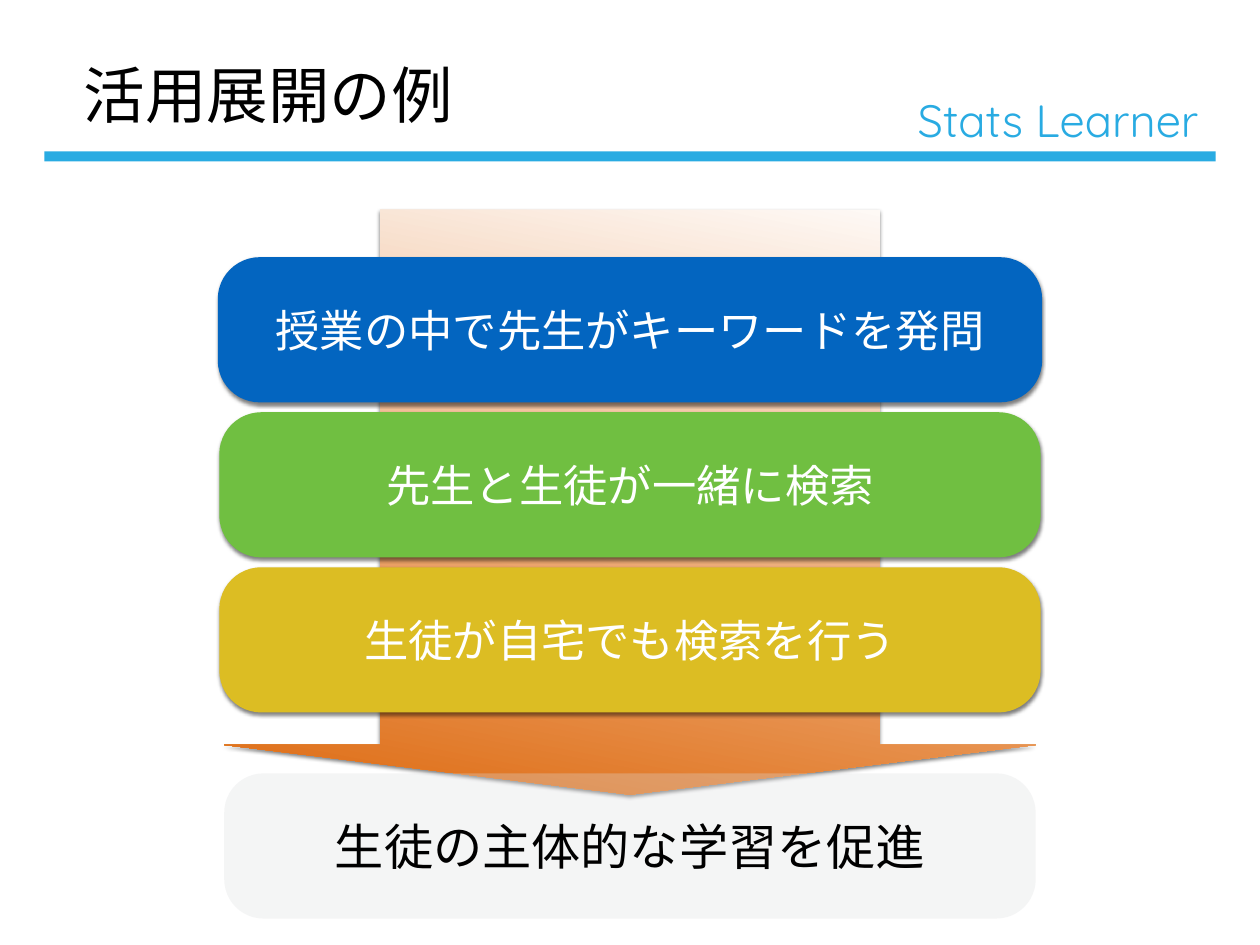
import dataclasses
from typing import Optional

import lxml.etree
import pptx
import pptx.dml.color
import pptx.enum.shapes
import pptx.enum.text
import pptx.oxml.ns
import pptx.util

Pt = pptx.util.Pt
qn = pptx.oxml.ns.qn
SHAPE = pptx.enum.shapes.MSO_SHAPE
ALIGN = pptx.enum.text.PP_ALIGN
ANCHOR = pptx.enum.text.MSO_ANCHOR

COLORS = {
    "black": "000000",
    "white": "FFFFFF",
    "sky": "29ABE2",
    "orange": "DE6A10",
    "blue": "0365C0",
    "green": "70BF41",
    "yellow": "DCBD23",
    "grey": "DCDEE0",
}
JAPANESE_FONT = "Noto Sans CJK JP"
LATIN_FONT = "Quicksand"
SLIDE_WIDTH, SLIDE_HEIGHT = 1024, 768
STEP_TOP, STEP_PITCH, STEP_HEIGHT = 209, 126, 118
INSET = 4.5


@dataclasses.dataclass(frozen=True)
class Box:
    left: float
    top: float
    width: float
    height: float


@dataclasses.dataclass(frozen=True)
class Step:
    text: str
    top: float
    width: float
    color: str
    text_color: str = "white"
    size: float = 36
    corner: float = 0.289
    opacity: Optional[int] = None


STEPS = [
    Step("授業の中で先生がキーワードを発問", STEP_TOP, 670, "blue"),
    Step("先生と生徒が一緒に検索", STEP_TOP + STEP_PITCH, 667.5, "green"),
    Step("生徒が自宅でも検索を行う", STEP_TOP + 2 * STEP_PITCH, 667.5, "yellow"),
]
GOAL = Step("生徒の主体的な学習を促進", 628.5, 659.5, "grey", "black", 40, 0.271, 30)


def rgb(name: str) -> pptx.dml.color.RGBColor:
    return pptx.dml.color.RGBColor.from_string(COLORS[name])


def place(shape, box: Box) -> None:
    shape.left, shape.top = Pt(box.left), Pt(box.top)
    shape.width, shape.height = Pt(box.width), Pt(box.height)


def write(shape, text: str, size: float, color: str, font: str, align, anchor) -> None:
    frame = shape.text_frame
    frame.word_wrap = True
    frame.auto_size = pptx.enum.text.MSO_AUTO_SIZE.NONE
    frame.vertical_anchor = anchor
    frame.margin_left = frame.margin_right = Pt(INSET)
    frame.margin_top = frame.margin_bottom = Pt(INSET)
    paragraph = frame.paragraphs[0]
    paragraph.alignment = align
    run = paragraph.add_run()
    run.text = text
    run.font.size = Pt(size)
    run.font.name = font
    run.font.color.rgb = rgb(color)
    east_asian = lxml.etree.SubElement(run.font._element, qn("a:ea"))
    east_asian.set("typeface", font)


def add_plain_shape(slide, kind, box: Box, color: Optional[str] = None):
    shape = slide.shapes.add_shape(
        kind, Pt(box.left), Pt(box.top), Pt(box.width), Pt(box.height))
    if color:
        shape.fill.solid()
        shape.fill.fore_color.rgb = rgb(color)
    shape.line.fill.background()
    shape.shadow.inherit = False
    return shape


def add_shadow(shape) -> None:
    effects = shape._element.spPr.find(qn("a:effectLst"))
    shadow = lxml.etree.SubElement(
        effects, qn("a:outerShdw"), blurRad=str(int(Pt(3))), dist=str(int(Pt(2))),
        dir=str(90 * 60000), rotWithShape="0")
    color = lxml.etree.SubElement(shadow, qn("a:srgbClr"), val=COLORS["black"])
    lxml.etree.SubElement(color, qn("a:alpha"), val="50000")


def add_step(slide, step: Step) -> None:
    box = Box((SLIDE_WIDTH - step.width) / 2, step.top, step.width, STEP_HEIGHT)
    shape = add_plain_shape(slide, SHAPE.ROUNDED_RECTANGLE, box, step.color)
    shape.adjustments[0] = step.corner
    if step.opacity is None:
        add_shadow(shape)
    else:
        color = shape._element.spPr.find(qn("a:solidFill")).find(qn("a:srgbClr"))
        lxml.etree.SubElement(color, qn("a:alpha"), val=str(step.opacity * 1000))
    write(shape, step.text, step.size, step.text_color, JAPANESE_FONT,
          ALIGN.CENTER, ANCHOR.MIDDLE)


def add_flow_arrow(slide) -> None:
    arrow = add_plain_shape(slide, SHAPE.RIGHT_ARROW, Box(274.4, 78.5, 475.2, 659.5))
    arrow.rotation = 90
    arrow.adjustments[0] = 0.616
    arrow.adjustments[1] = 0.085
    arrow.fill.gradient()
    arrow.fill.gradient_angle = 349
    for stop, color in zip(arrow.fill.gradient_stops, ("white", "orange")):
        stop.color.rgb = rgb(color)
    add_shadow(arrow)


def main() -> None:
    presentation = pptx.Presentation()
    presentation.slide_width = Pt(SLIDE_WIDTH)
    presentation.slide_height = Pt(SLIDE_HEIGHT)
    slide = presentation.slides.add_slide(presentation.slide_layouts[5])

    # Header: title, series name and rule
    title = slide.shapes.title
    place(title, Box(63.4, 47.5, 400, 58.3))
    write(title, "活用展開の例", 50, "black", JAPANESE_FONT, ALIGN.LEFT, ANCHOR.MIDDLE)
    add_plain_shape(slide, SHAPE.RECTANGLE, Box(36, 123.1, 952, 8), "sky")
    series = slide.shapes.add_textbox(Pt(732.2), Pt(72.7), Pt(255.6), Pt(51.1))
    write(series, "Stats Learner", 36.8, "sky", LATIN_FONT, ALIGN.CENTER, ANCHOR.BOTTOM)

    # Flow: arrow behind the steps, goal at its tip
    add_flow_arrow(slide)
    for step in [*STEPS, GOAL]:
        add_step(slide, step)

    presentation.save("out.pptx")


if __name__ == "__main__":
    main()
